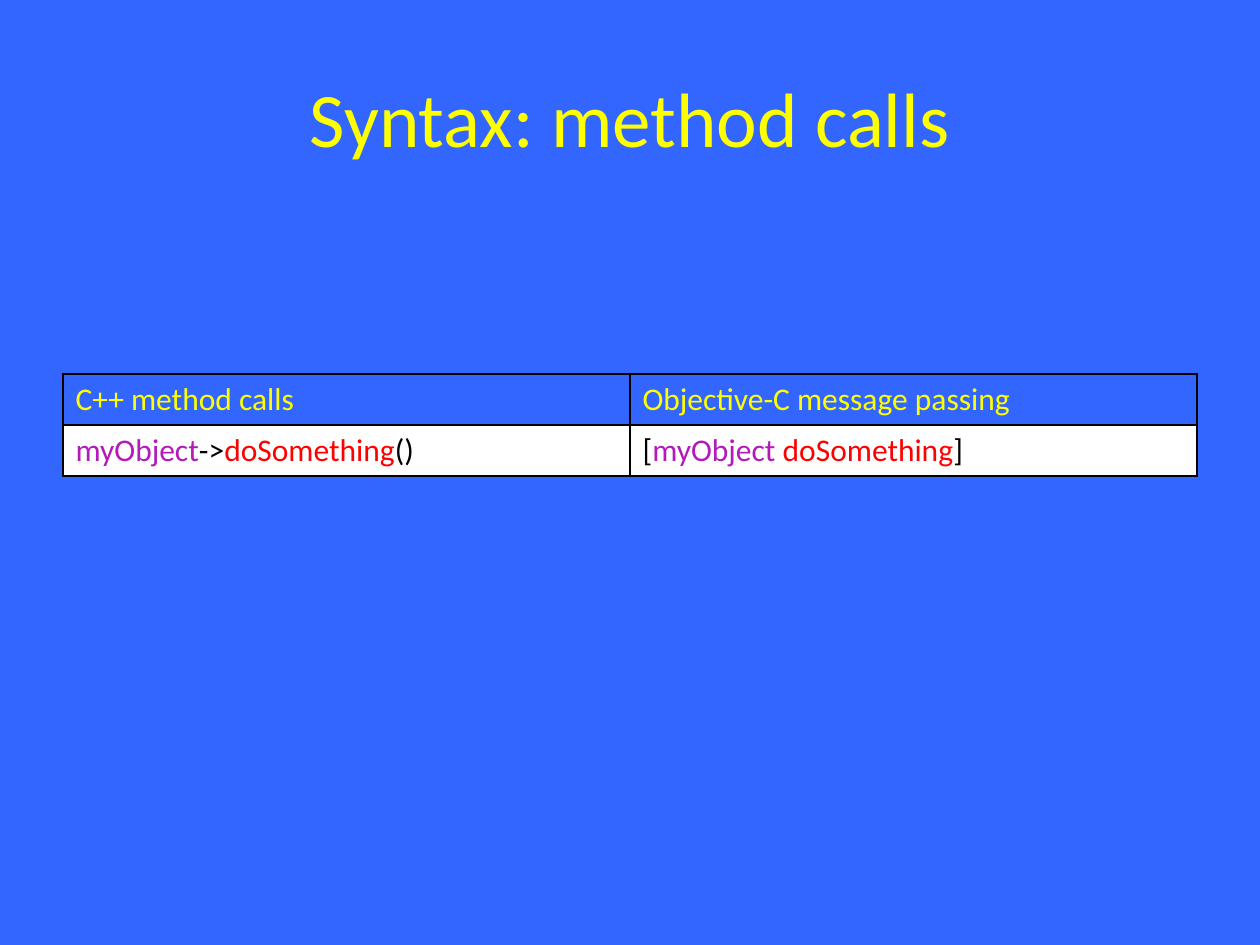
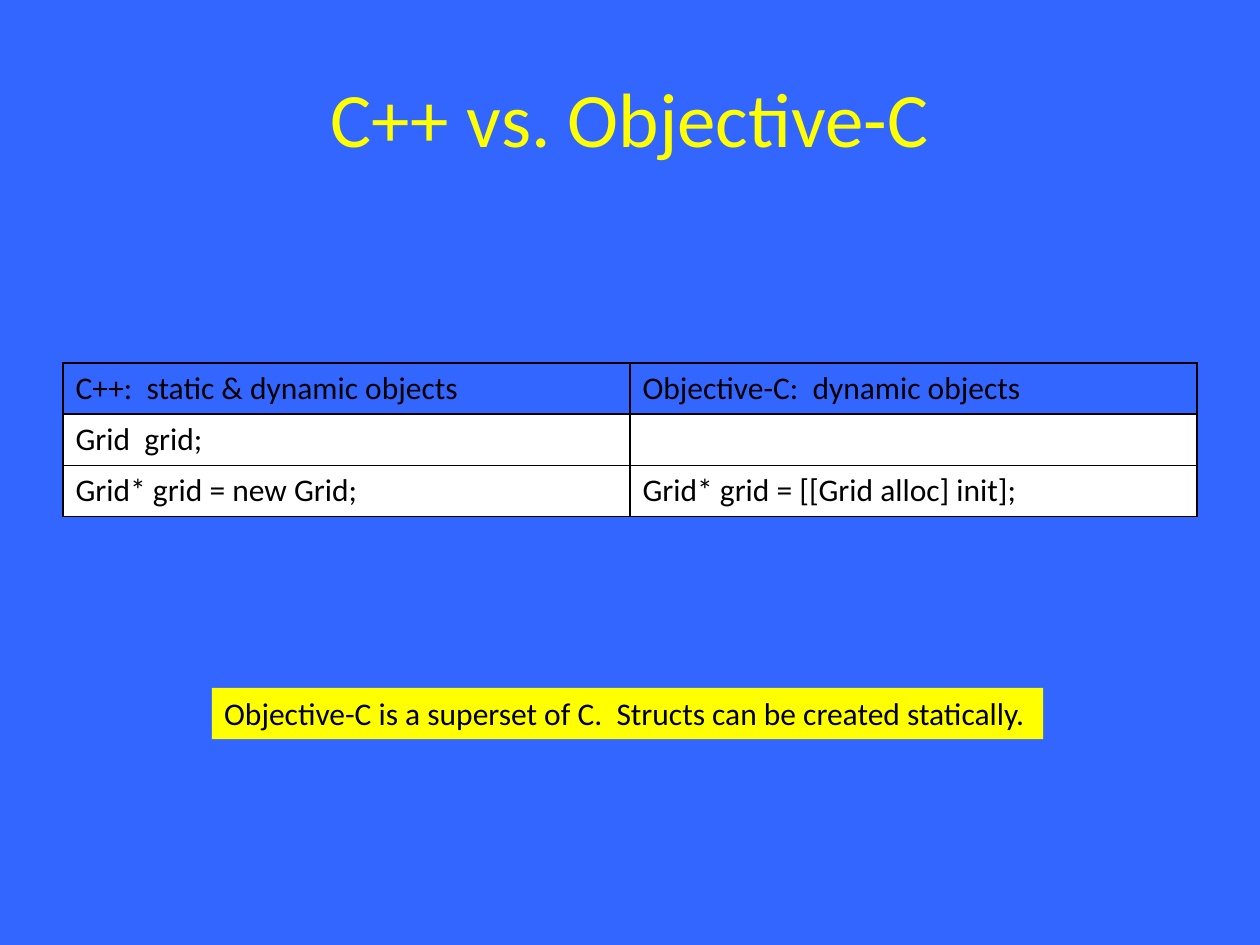
"""Build two slides comparing C++ and Objective-C syntax."""
from lxml import etree
from pptx import Presentation
from pptx import util as u
from pptx.dml.color import RGBColor
from pptx.enum import shapes, text
from pptx.oxml.ns import qn

BLUE = RGBColor(0x33, 0x66, 0xFF)
YELLOW = RGBColor(0xFF, 0xFF, 0x00)
PURPLE = RGBColor(0xB3, 0x1A, 0xB9)
RED = RGBColor(0xFF, 0x00, 0x00)
BLACK = RGBColor(0x00, 0x00, 0x00)
WHITE = RGBColor(0xFF, 0xFF, 0xFF)
FONT = "Calibri"
TITLE_SIZE, BODY_SIZE = 44, 18

SLIDES = [
    {
        "title": "Syntax: method calls",
        "table_top": 7.54,
        "rows": [
            [[("C++ method calls", YELLOW)],
             [("Objective-C message passing", YELLOW)]],
            [[("myObject", PURPLE), ("->", BLACK), ("doSomething", RED), ("()", BLACK)],
             [("[", BLACK), ("myObject ", PURPLE), ("doSomething", RED), ("]", BLACK)]],
        ],
    },
    {
        "title": "C++ vs. Objective-C",
        "table_top": 7.32,
        "rows": [
            [[("C++:  static & dynamic objects", BLACK)],
             [("Objective-C:  dynamic objects", BLACK)]],
            [[("Grid  grid;", BLACK)], []],
            [[("Grid* grid = new Grid;", BLACK)],
             [("Grid* grid = [[Grid alloc] init];", BLACK)]],
        ],
        "note": "Objective-C is a superset of C.  Structs can be created statically.",
    },
]

SLIDE_WIDTH, SLIDE_HEIGHT = u.Cm(25.4), u.Cm(19.05)
MARGIN = u.Cm(1.27)
CONTENT_WIDTH = SLIDE_WIDTH - 2 * MARGIN
TITLE_TOP, TITLE_HEIGHT = u.Cm(0.76), u.Cm(3.18)
ROW_HEIGHT = u.Cm(1.03)
NOTE_BOX = [u.Cm(value) for value in (4.27, 13.87, 16.76, 1.03)]


def add_runs(paragraph, runs, size=BODY_SIZE):
    for words, color in runs:
        run = paragraph.add_run()
        run.text = words
        run.font.name = FONT
        run.font.size = u.Pt(size)
        run.font.bold = False
        run.font.color.rgb = color


def add_borders(cell):
    properties = cell._tc.get_or_add_tcPr()
    for side in ("lnL", "lnR", "lnT", "lnB"):
        line = etree.SubElement(properties, qn(f"a:{side}"), w=str(u.Pt(1)))
        fill = etree.SubElement(line, qn("a:solidFill"))
        etree.SubElement(fill, qn("a:srgbClr"), val=str(BLACK))


def add_comparison(slide, rows, top):
    columns = len(rows[0])
    frame = slide.shapes.add_table(len(rows), columns, MARGIN, top,
                                   CONTENT_WIDTH, ROW_HEIGHT * len(rows))
    table = frame.table
    table.horz_banding = False
    for column in table.columns:
        column.width = CONTENT_WIDTH // columns
    for row_index, row in enumerate(rows):
        table.rows[row_index].height = ROW_HEIGHT
        for column_index, runs in enumerate(row):
            cell = table.cell(row_index, column_index)
            add_borders(cell)
            if row_index == 0:
                cell.fill.background()
            else:
                cell.fill.solid()
                cell.fill.fore_color.rgb = WHITE
            add_runs(cell.text_frame.paragraphs[0], runs)


def add_note(slide, words):
    shape = slide.shapes.add_shape(shapes.MSO_SHAPE.RECTANGLE, *NOTE_BOX)
    shape.shadow.inherit = False
    shape.fill.solid()
    shape.fill.fore_color.rgb = YELLOW
    shape.line.fill.background()
    frame = shape.text_frame
    frame.word_wrap = True
    frame.vertical_anchor = text.MSO_ANCHOR.TOP
    paragraph = frame.paragraphs[0]
    paragraph.alignment = text.PP_ALIGN.LEFT
    add_runs(paragraph, [(words, BLACK)])


def add_title(slide, words):
    title = slide.shapes.title
    title.left, title.top = MARGIN, TITLE_TOP
    title.width, title.height = CONTENT_WIDTH, TITLE_HEIGHT
    title.text_frame.vertical_anchor = text.MSO_ANCHOR.MIDDLE
    paragraph = title.text_frame.paragraphs[0]
    paragraph.alignment = text.PP_ALIGN.CENTER
    add_runs(paragraph, [(words, YELLOW)], TITLE_SIZE)


def main():
    presentation = Presentation()
    presentation.slide_width, presentation.slide_height = SLIDE_WIDTH, SLIDE_HEIGHT
    background = presentation.slide_master.background.fill
    background.solid()
    background.fore_color.rgb = BLUE
    title_only = presentation.slide_layouts.get_by_name("Title Only")
    for content in SLIDES:
        slide = presentation.slides.add_slide(title_only)
        add_title(slide, content["title"])
        add_comparison(slide, content["rows"], u.Cm(content["table_top"]))
        if "note" in content:
            add_note(slide, content["note"])
    presentation.save("out.pptx")


if __name__ == "__main__":
    main()
